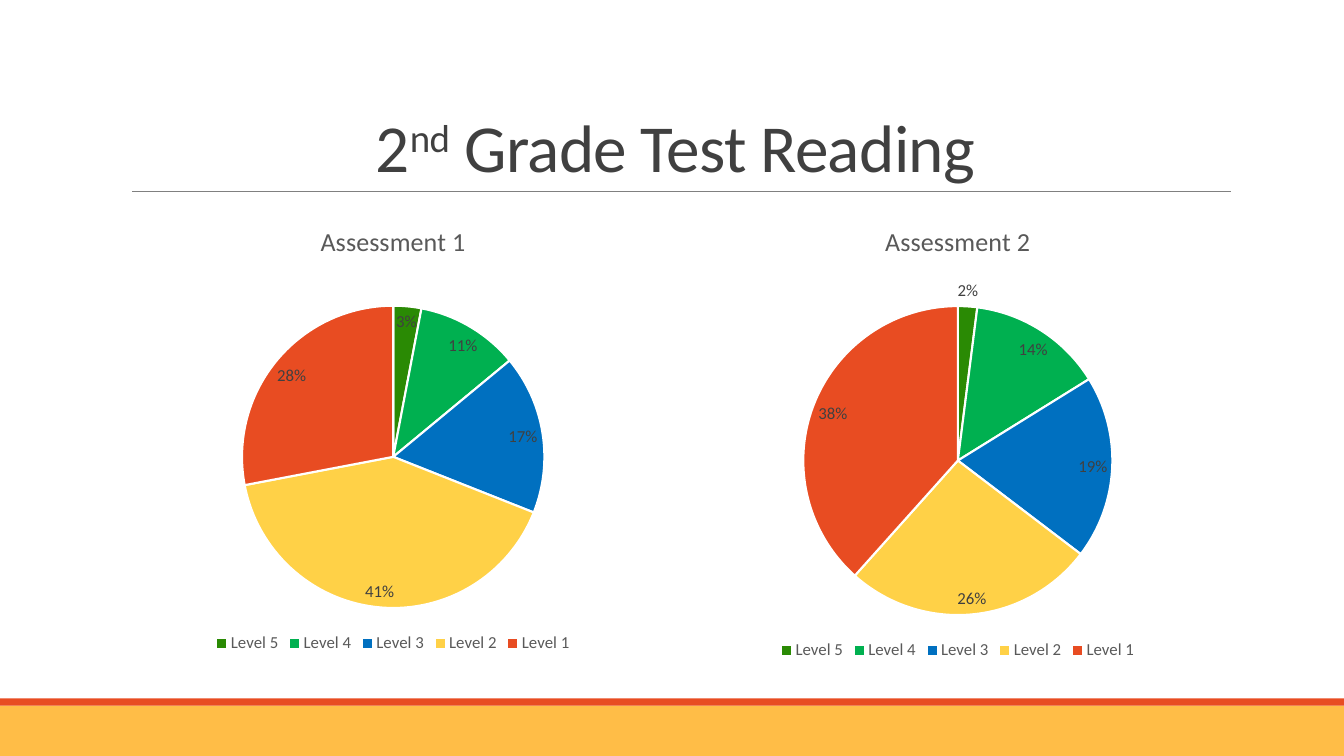
from lxml.etree import SubElement
from pptx import Presentation
from pptx.chart.data import CategoryChartData
from pptx.dml.color import RGBColor
from pptx.enum.chart import XL_CHART_TYPE, XL_LABEL_POSITION, XL_LEGEND_POSITION
from pptx.enum.shapes import MSO_CONNECTOR, MSO_SHAPE
from pptx.enum.text import MSO_ANCHOR, PP_ALIGN
from pptx.oxml.ns import qn
from pptx.util import Inches, Pt

WIDE, HIGH = 13.33, 7.5
LEFT, COL, GAP = 1.2, 5.4, 0.2  # two chart columns
TOP = 2.02
FACE = "Calibri"
LEVELS = {
    "Level 5": "2A8A04",
    "Level 4": "00B050",
    "Level 3": "0070C0",
    "Level 2": "FFD147",
    "Level 1": "E84C22",
}
TESTS = [
    ("Assessment 1", (3, 11, 17, 41, 28), 4.5),
    ("Assessment 2", (2, 14, 19, 26, 38), 4.57),
]


def paint(color, tone):
    color.rgb = RGBColor.from_string(tone)


def style(font, size, tone):
    font.name = FACE
    font.size = Pt(size)
    font.bold = False
    paint(font.color, tone)


def add_band(slide, top, height, tone):
    band = slide.shapes.add_shape(
        MSO_SHAPE.RECTANGLE, 0, Inches(top), Inches(WIDE), Inches(height))
    band.shadow.inherit = False
    band.fill.solid()
    paint(band.fill.fore_color, tone)
    band.line.fill.background()


def add_rule(slide, start, end, y):
    rule = slide.shapes.add_connector(
        MSO_CONNECTOR.STRAIGHT, Inches(start), Inches(y), Inches(end), Inches(y))
    paint(rule.line.color, "808080")
    rule.line.width = Pt(0.5)
    SubElement(rule._element.spPr, qn("a:effectLst"))


def add_title(slide, parts):
    box = slide.shapes.add_textbox(
        Inches(LEFT), Inches(0.31), Inches(2 * COL + GAP), Inches(1.59))
    frame = box.text_frame
    frame.word_wrap = True
    frame.vertical_anchor = MSO_ANCHOR.BOTTOM
    para = frame.paragraphs[0]
    para.alignment = PP_ALIGN.CENTER
    para.line_spacing = 0.85
    style(para.font, 48, "404040")
    for text, rise in parts:
        run = para.add_run()
        run.text = text
        props = run._r.get_or_add_rPr()
        props.set("spc", "-50")
        if rise:
            props.set("baseline", str(rise * 1000))


def add_pie(slide, col, name, values, height):
    data = CategoryChartData(number_format="General")
    data.categories = list(LEVELS)
    data.add_series(name, values)
    left = LEFT + col * (COL + GAP)
    chart = slide.shapes.add_chart(
        XL_CHART_TYPE.PIE, Inches(left), Inches(TOP),
        Inches(COL), Inches(height), data).chart
    style(chart.font, 10, "000000")

    # Heading and legend
    chart.has_title = True
    head = chart.chart_title.text_frame
    head.text = name
    style(head.paragraphs[0].font, 18.6, "595959")
    chart.chart_title.include_in_layout = False
    chart.has_legend = True
    chart.legend.position = XL_LEGEND_POSITION.BOTTOM
    chart.legend.include_in_layout = False
    style(chart.legend.font, 12, "595959")

    # Slices
    plot = chart.plots[0]
    plot.vary_by_categories = True
    series = plot.series[0]
    for spot, tone in enumerate(LEVELS.values()):
        form = series.points[spot].format
        form.fill.solid()
        paint(form.fill.fore_color, tone)
        paint(form.line.color, "FFFFFF")
        form.line.width = Pt(1.5)

    # Percent labels
    labels = series.data_labels
    labels.show_percentage = True
    labels.show_value = False
    labels.number_format = "0%"
    labels.number_format_is_linked = False
    labels.position = XL_LABEL_POSITION.BEST_FIT
    style(labels.font, 12, "404040")


def main():
    deck = Presentation()
    deck.slide_width, deck.slide_height = Inches(WIDE), Inches(HIGH)
    slide = deck.slides.add_slide(deck.slide_layouts[6])

    # Footer bands and title rule
    add_band(slide, 7, 0.5, "FFBD47")
    add_band(slide, 6.93, 0.07, "E84C22")
    add_rule(slide, 1.31, 12.21, 1.9)

    # Title and charts
    add_title(slide, [("2", 0), ("nd", 30), (" Grade Test Reading", 0)])
    for col, test in enumerate(TESTS):
        add_pie(slide, col, *test)

    deck.save("out.pptx")


if __name__ == "__main__":
    main()
